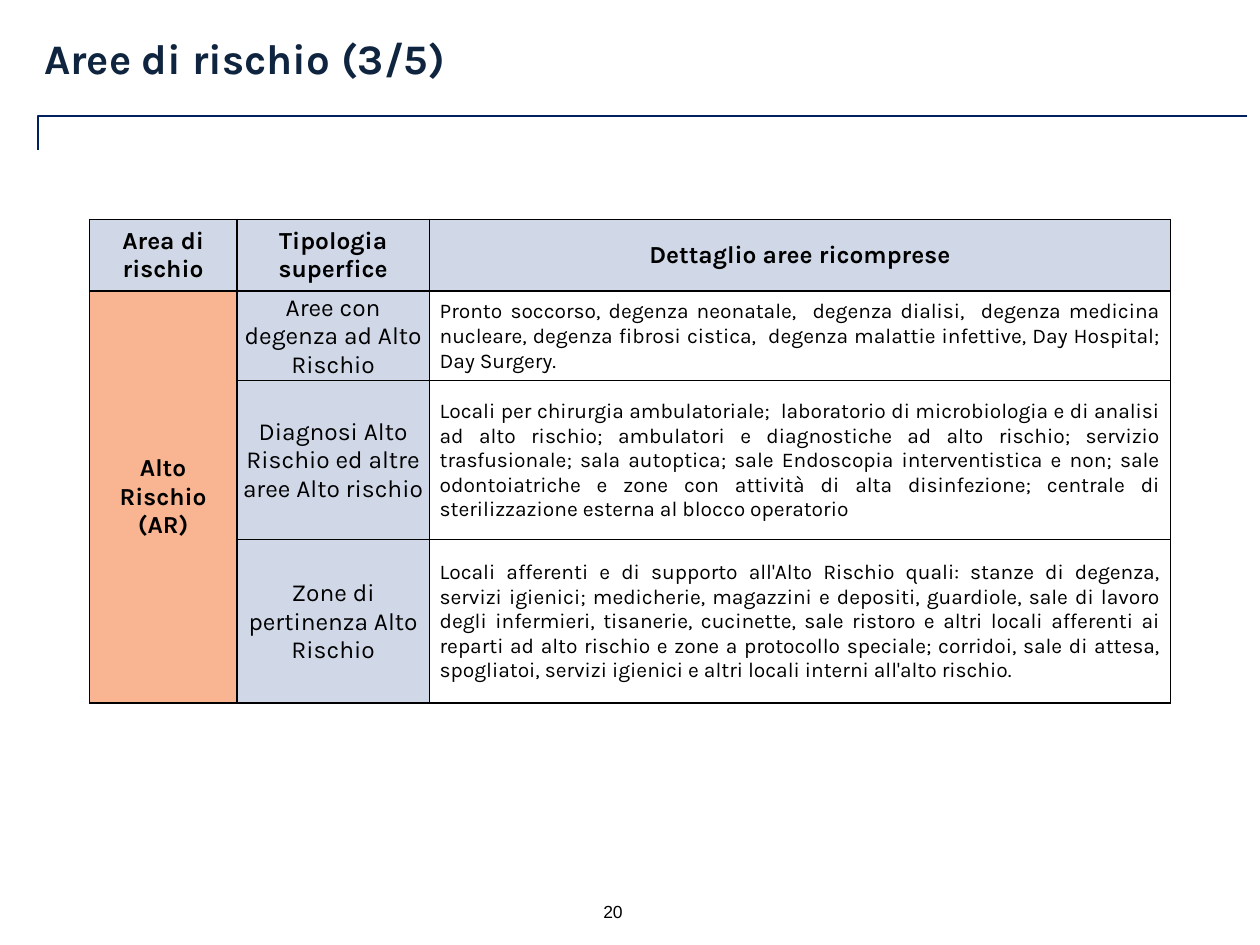
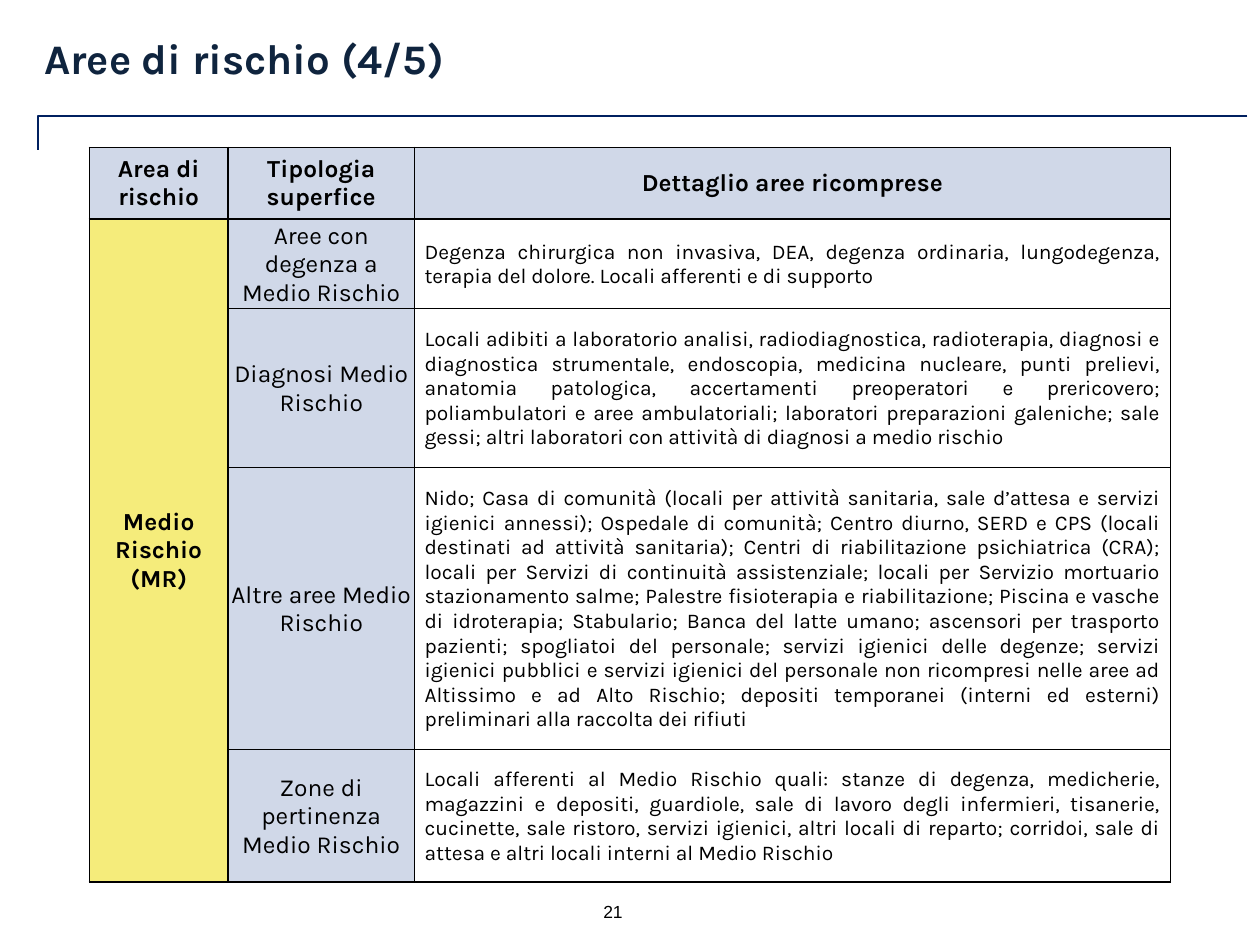
"""Build two slides with tables of hospital risk areas."""
from dataclasses import dataclass

from lxml import etree
from pptx import Presentation, util as u
from pptx.dml.color import RGBColor
from pptx.enum import shapes, text as t
from pptx.oxml import ns


@dataclass(frozen=True)
class Theme:
    """Colours, fonts and type sizes shared by the slides."""
    title: str = "0F243E"
    rule: str = "002060"
    ink: str = "000000"
    head: str = "D0D8E8"
    high: str = "F9B491"
    medium: str = "F5EC7B"
    face: str = "Karla"
    plain: str = "Arial"
    big: int = 24
    label: int = 14
    body: int = 12
    small: int = 10


THEME = Theme()
COLS, ROWS = 10, 7.5
LEFT = 0.71
HEAD = ["Area di\u0020rischio", "Tipologia superfice", "Dettaglio aree ricomprese"]

HIGH = [
    ("Aree con degenza ad Alto Rischio",
     "Pronto soccorso, degenza neonatale,  degenza dialisi,  degenza medicina "
     "nucleare, degenza fibrosi cistica,  degenza malattie infettive, "
     "Day Hospital; Day Surgery."),
    ("Diagnosi Alto Rischio ed altre aree Alto rischio",
     "Locali per chirurgia ambulatoriale;  laboratorio di microbiologia e di "
     "analisi ad alto rischio; ambulatori e diagnostiche ad alto rischio; "
     "servizio trasfusionale; sala autoptica; sale Endoscopia interventistica "
     "e non; sale odontoiatriche e zone con attività di alta disinfezione; "
     "centrale di sterilizzazione esterna al blocco operatorio"),
    ("Zone di pertinenza Alto Rischio",
     "Locali afferenti e di supporto all'Alto Rischio quali: stanze di degenza, "
     "servizi igienici; medicherie, magazzini e depositi, guardiole, sale di "
     "lavoro degli infermieri, tisanerie, cucinette, sale ristoro e altri locali "
     "afferenti ai reparti ad alto rischio e zone a protocollo speciale; "
     "corridoi, sale di attesa, spogliatoi, servizi igienici e altri locali "
     "interni all'alto rischio."),
]

MEDIUM = [
    ("Aree con degenza a Medio Rischio",
     "Degenza chirurgica non invasiva, DEA, degenza ordinaria, lungodegenza, "
     "terapia del dolore. Locali afferenti e di supporto"),
    ("Diagnosi Medio Rischio",
     "Locali adibiti a laboratorio analisi, radiodiagnostica, radioterapia, "
     "diagnosi e diagnostica strumentale, endoscopia, medicina nucleare, punti "
     "prelievi, anatomia patologica, accertamenti preoperatori e prericovero; "
     "poliambulatori e aree ambulatoriali; laboratori preparazioni galeniche; "
     "sale gessi; altri laboratori con attività di diagnosi a medio rischio"),
    ("Altre aree Medio Rischio",
     "Nido; Casa di comunità (locali per attività sanitaria, sale d’attesa e "
     "servizi igienici annessi); Ospedale di comunità; Centro diurno, SERD e CPS "
     "(locali destinati ad attività sanitaria); Centri di riabilitazione "
     "psichiatrica (CRA); locali per Servizi di continuità assistenziale; locali "
     "per Servizio mortuario stazionamento salme; Palestre fisioterapia e "
     "riabilitazione; Piscina e vasche di idroterapia; Stabulario; Banca del "
     "latte umano; ascensori per trasporto pazienti; spogliatoi del personale; "
     "servizi igienici delle degenze; servizi igienici pubblici e servizi "
     "igienici del personale non ricompresi nelle aree ad Altissimo e ad Alto "
     "Rischio; depositi temporanei (interni ed esterni) preliminari alla "
     "raccolta dei rifiuti"),
    ("Zone di pertinenza Medio Rischio",
     "Locali afferenti al Medio Rischio quali: stanze di degenza, medicherie, "
     "magazzini e depositi, guardiole, sale di lavoro degli infermieri, "
     "tisanerie, cucinette, sale ristoro, servizi igienici, altri locali di "
     "reparto; corridoi, sale di attesa e altri locali interni al Medio Rischio"),
]


def grid(*units):
    """Turn grid columns or rows into lengths."""
    return [u.Inches(n) for n in units]


def write(frame, words, size=THEME.label, face=THEME.face, ink=THEME.ink,
          bold=False, align=t.PP_ALIGN.LEFT, lead=None):
    """Fill a text frame, one paragraph a line, in one format."""
    frame.text = words
    for para in frame.paragraphs:
        para.alignment = align
        if lead:
            para.line_spacing = lead
        for run in para.runs:
            font = run.font
            font.size, font.name, font.bold = u.Pt(size), face, bold
            font.color.rgb = RGBColor.from_string(ink)


def title(slide, words):
    """Place and format the slide title."""
    shape = slide.shapes.title
    shape.left, shape.top, shape.width, shape.height = grid(0.35, 0.28, 9, 0.5)
    frame = shape.text_frame
    frame.auto_size = t.MSO_AUTO_SIZE.NONE
    frame.vertical_anchor = t.MSO_ANCHOR.TOP
    (frame.margin_left, frame.margin_top,
     frame.margin_right, frame.margin_bottom) = grid(0, 0.04, 0, 0)
    write(frame, words, size=THEME.big, ink=THEME.title, bold=True, lead=0.85)


def rule(slide):
    """Draw the angled line under the title."""
    line = slide.shapes.add_connector(
        shapes.MSO_CONNECTOR.ELBOW, *grid(9.9, 0.92, 0.3, 1.19))
    line.line.color.rgb = RGBColor.from_string(THEME.rule)
    line.line.width = u.Pt(1)
    props = line.element.spPr
    props.find(ns.qn("a:prstGeom")).set("prst", "bentConnector2")
    etree.SubElement(props, ns.qn("a:effectLst"))


def number(slide, page):
    """Write the page number at the foot."""
    box = slide.shapes.add_textbox(*grid(4.69, 7.1, 0.47, 0.27))
    box.text_frame.word_wrap = True
    write(box.text_frame, str(page), size=THEME.small, face=THEME.plain)


def border(cell):
    """Give all four sides of a cell a thin line."""
    props = cell._tc.get_or_add_tcPr()
    for spot, side in enumerate("LRTB"):
        line = etree.Element(ns.qn(f"a:ln{side}"), w=str(u.Pt(1)))
        fill = etree.SubElement(line, ns.qn("a:solidFill"))
        etree.SubElement(fill, ns.qn("a:srgbClr"), val=THEME.ink)
        props.insert(spot, line)


def fill(cell, words, tint=None, pad=(0.1, 0.05, 0.05), **form):
    """Write a cell, tint it and set its side, top and foot margins."""
    side, top, foot = pad
    (cell.margin_left, cell.margin_right,
     cell.margin_top, cell.margin_bottom) = grid(side, side, top, foot)
    cell.vertical_anchor = t.MSO_ANCHOR.MIDDLE
    if tint:
        cell.fill.solid()
        cell.fill.fore_color.rgb = RGBColor.from_string(tint)
    else:
        cell.fill.background()
    write(cell.text_frame, words, **form)


def table(slide, top, wide, tall, area, tint, side, items):
    """Add a risk table with one merged area cell at its left."""
    frame = slide.shapes.add_table(
        len(tall), len(wide), *grid(LEFT, top, sum(wide), sum(tall)))
    body = frame.table
    body.horz_banding = False
    for col, size in zip(body.columns, wide):
        col.width = u.Inches(size)
    for row, size in zip(body.rows, tall):
        row.height = u.Inches(size)
    for cell in body.iter_cells():
        border(cell)
    strong = dict(bold=True, align=t.PP_ALIGN.CENTER)
    for spot, words in enumerate(HEAD):
        fill(body.cell(0, spot), words, THEME.head, **strong)
    body.cell(1, 0).merge(body.cell(len(items), 0))
    fill(body.cell(1, 0), area, tint, **strong)
    for row, (kind, detail) in enumerate(items, 1):
        fill(body.cell(row, 1), kind, THEME.head, (side, 0.01, 0),
             align=t.PP_ALIGN.CENTER)
        fill(body.cell(row, 2), detail, pad=(0.08, 0.01, 0),
             size=THEME.body, align=t.PP_ALIGN.JUSTIFY)


def page(deck, words, count, **parts):
    """Add a slide with title, rule, number and table."""
    slide = deck.slides.add_slide(deck.slide_layouts.get_by_name("Title Only"))
    number(slide, count)
    rule(slide)
    title(slide, words)
    table(slide, **parts)


def main():
    """Build and save the deck."""
    deck = Presentation()
    deck.slide_width, deck.slide_height = grid(COLS, ROWS)
    page(deck, "Aree di rischio (3/5)", 20, top=1.74,
         wide=[1.17, 1.53, 5.88], tall=[0.57, 0.71, 1.26, 1.3],
         area="Alto Rischio\n(AR)", tint=THEME.high, side=0.04, items=HIGH)
    page(deck, "Aree di rischio (4/5)", 21, top=1.17,
         wide=[1.1, 1.48, 6], tall=[0.57, 0.71, 1.26, 2.24, 1.05],
         area="Medio Rischio\n(MR)", tint=THEME.medium, side=0.01, items=MEDIUM)
    deck.save("out.pptx")


if __name__ == "__main__":
    main()
